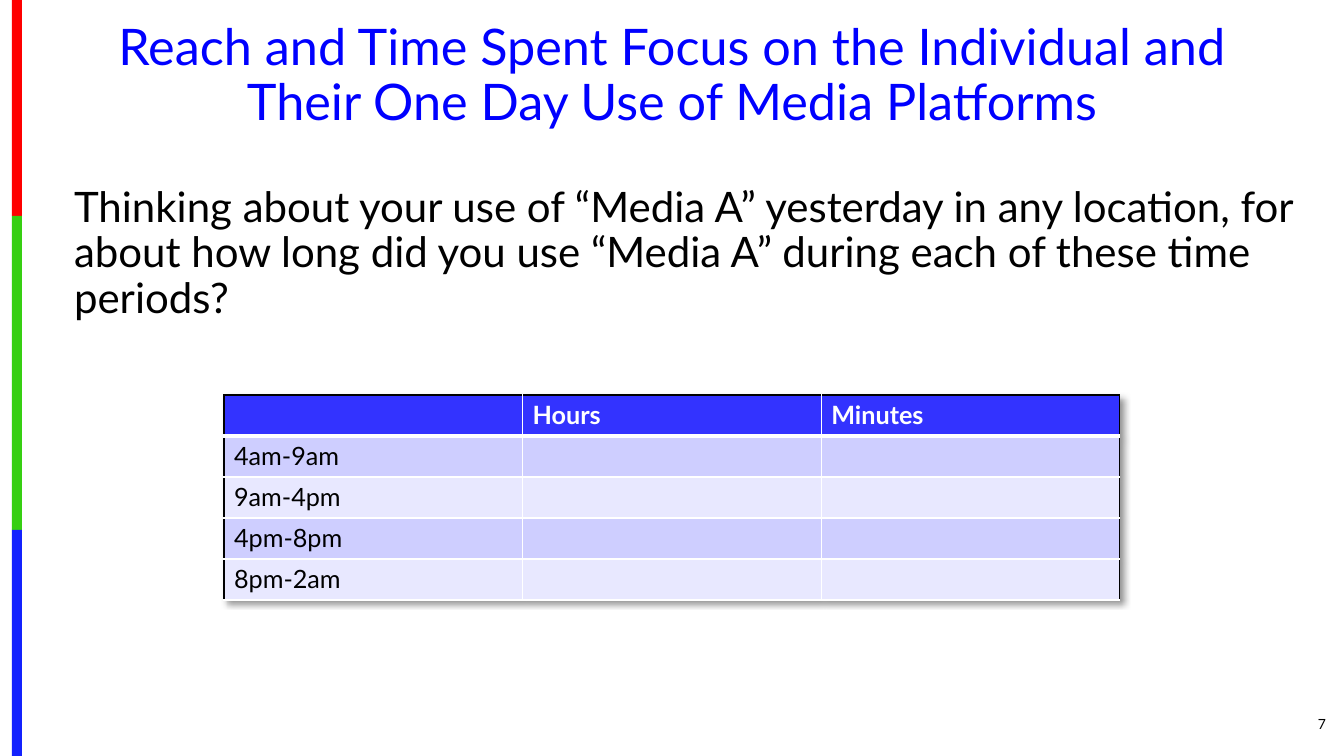
from lxml.etree import SubElement as Sub
from pptx import Presentation
from pptx.dml.color import RGBColor as Rgb
from pptx.enum.shapes import MSO_SHAPE as Shape
from pptx.enum.text import MSO_ANCHOR as Anchor, MSO_AUTO_SIZE as Auto, PP_ALIGN as Align
from pptx.oxml import parse_xml
from pptx.oxml.ns import nsdecls, qn
from pptx.util import Emu, Pt

TITLE = "Reach and Time Spent Focus on the Individual and Their One Day Use of Media Platforms"
BODY = ("Thinking about your use of “Media A” yesterday in any location, for about how long "
        "did you use “Media A” during each of these time periods?")
PAGE = "7"
ROWS = [
    ("", "Hours", "Minutes"),
    ("4am-9am", "", ""),
    ("9am-4pm", "", ""),
    ("4pm-8pm", "", ""),
    ("8pm-2am", "", ""),
]
BARS = [("red", 0, 216), ("green", 216, 530), ("blue", 530, 756)]
COLORS = {
    "red": "FE0000", "green": "36CF12", "blue": "1322FE", "title": "0000FF",
    "black": "000000", "white": "FFFFFF", "head": "3333FF", "dark": "CECEFF", "light": "E8E8FF",
}
FONT = "Lato"
SCALE = 914400 / 100.8


def px(n):
    return Emu(round(n * SCALE))


def color(name):
    return Rgb.from_string(COLORS[name])


def place(shape, left, top, width, height):
    shape.left, shape.top, shape.width, shape.height = map(px, (left, top, width, height))


def style(para, size, tint, bold=False):
    font = para.font
    font.name, font.size, font.bold = FONT, Pt(size), bold
    font.color.rgb = color(tint)


def write(shape, text, size, tint, align, anchor=Anchor.TOP):
    frame = shape.text_frame
    frame.word_wrap = True
    frame.auto_size = Auto.NONE
    frame.vertical_anchor = anchor
    frame.text = text
    para = frame.paragraphs[0]
    para.alignment = align
    para.space_before = Pt(0)
    return para


def edge(cell, side, tint, width):
    line = Sub(cell._tc.get_or_add_tcPr(), qn("a:" + side), w=str(Pt(width)))
    fill = Sub(line, qn("a:solidFill"))
    Sub(fill, qn("a:srgbClr"), val=COLORS[tint])


def draw_cell(cell, text, row, col):
    head = row == 0
    edge(cell, "lnL", "black" if col == 0 else "white", 1)
    edge(cell, "lnR", "black" if col == len(ROWS[0]) - 1 else "white", 1)
    edge(cell, "lnT", "black" if head else "white", 3 if row == 1 else 1)
    edge(cell, "lnB", "white", 3 if head else 1)
    cell.fill.solid()
    cell.fill.fore_color.rgb = color("head" if head else "dark" if row % 2 else "light")
    cell.text = text
    style(cell.text_frame.paragraphs[0], 18, "white" if head else "black", head)


def draw_table(slide, left, top, width, high):
    count = len(ROWS[0])
    grid = slide.shapes.add_table(len(ROWS), count, px(left), px(top),
                                  px(width), px(high * len(ROWS))).table
    for col in grid.columns:
        col.width = px(width / count)
    for row, texts in enumerate(ROWS):
        grid.rows[row].height = px(high)
        for col, text in enumerate(texts):
            draw_cell(grid.cell(row, col), text, row, col)
    shadow = parse_xml(
        f'<a:effectLst {nsdecls("a")}><a:outerShdw blurRad="50800" dist="38100" dir="2700000" '
        'algn="tl" rotWithShape="0"><a:srgbClr val="000000"><a:alpha val="40000"/></a:srgbClr>'
        '</a:outerShdw></a:effectLst>')
    grid._tbl.tblPr.insert(0, shadow)


def main():
    deck = Presentation()
    deck.slide_width, deck.slide_height = px(1344), px(756)
    slide = deck.slides.add_slide(deck.slide_layouts[1])

    for tint, top, end in BARS:
        bar = slide.shapes.add_shape(Shape.RECTANGLE, px(12), px(top), px(10), px(end - top))
        bar.shadow.inherit = False
        bar.fill.solid()
        bar.fill.fore_color.rgb = color(tint)
        bar.line.fill.background()

    title, body = slide.placeholders
    place(title, 46, 17, 1252, 120)
    para = write(title, TITLE, 36, "title", Align.CENTER)
    para.line_spacing = 0.9
    style(para, 36, "title")

    place(body, 64, 181, 1251, 163)
    para = write(body, BODY, 30, "black", Align.LEFT)
    para.line_spacing = 0.9
    props = para._p.get_or_add_pPr()
    props.set("marL", "0")
    props.set("indent", "0")
    Sub(props, qn("a:buNone"))
    style(para, 30, "black")

    page = slide.shapes.add_textbox(px(1227), px(704), px(109), px(40))
    style(write(page, PAGE, 10, "black", Align.RIGHT, Anchor.MIDDLE), 10, "black")

    draw_table(slide, 224, 395, 896, 41)
    deck.save("out.pptx")


if __name__ == "__main__":
    main()
